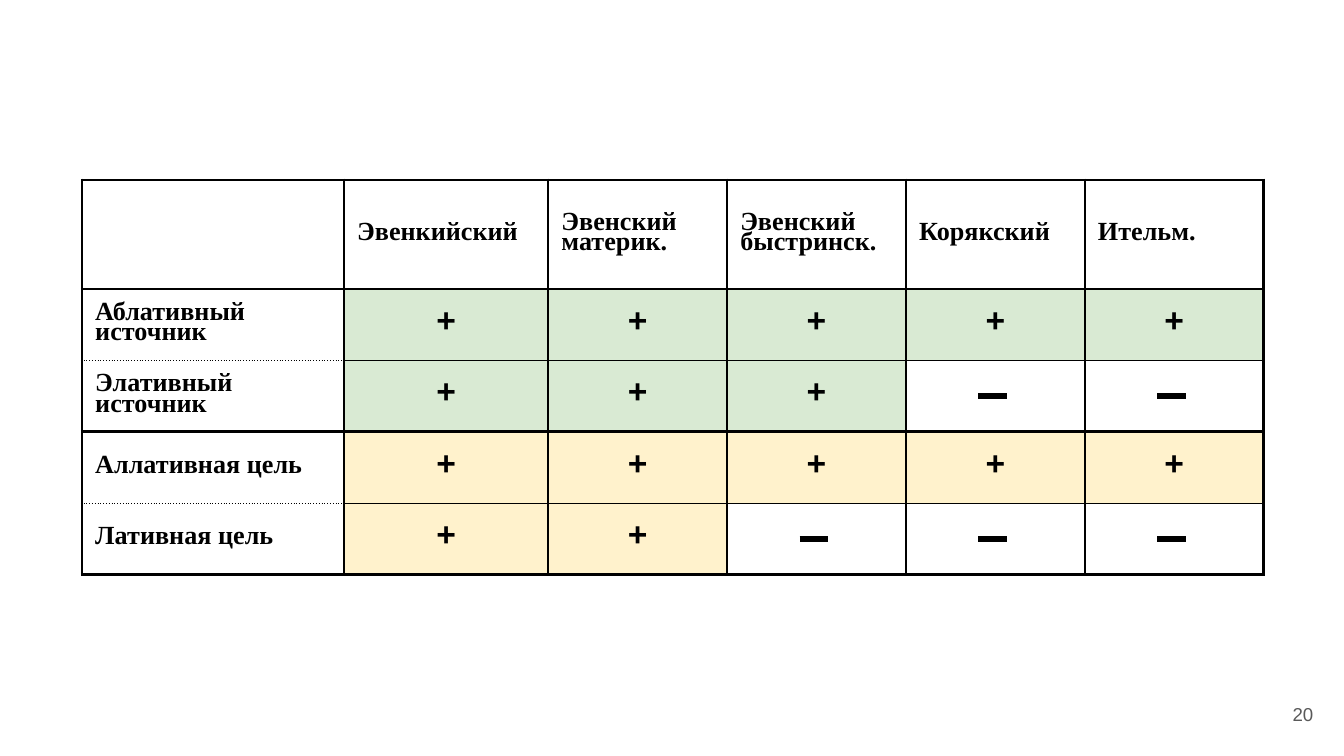
"""Build a slide with a table of spatial cases across five languages."""
from dataclasses import dataclass

from lxml.etree import SubElement
from pptx import Presentation
from pptx.dml.color import RGBColor
from pptx.enum.shapes import MSO_CONNECTOR
from pptx.enum.text import MSO_ANCHOR, PP_ALIGN
from pptx.oxml.ns import qn
from pptx.util import Cm, Pt

BLACK, GREEN, CREAM = "000000", "D9EAD3", "FFF2CC"
LEFT, TOP = 1.55, 3.4
WIDTHS = [4.95, 3.86] + [3.38] * 4
HEIGHTS = [2.06] + [1.35] * 4
DASH_LENGTH, DASH_SHIFT = 0.54, -0.05
MARGINS = dict.fromkeys(
    ("margin_left", "margin_right", "margin_top", "margin_bottom"), Cm(0.25))
LABEL = {"name": "Times New Roman", "size": Pt(14), "bold": True}
PLUS = {"name": "Arial", "size": Pt(18), "bold": True}
NUMBER = {"name": "Arial", "size": Pt(10)}
HEADINGS = ["", "Эвенкийский", "Эвенский материк.", "Эвенский быстринск.",
            "Корякский", "Ительм."]


@dataclass
class CaseRow:
    """A case, its marks by language and the fill of its plus cells."""
    label: str
    marks: str
    fill: str
    opens_group: bool


CASES = [
    CaseRow("Аблативный источник", "+++++", GREEN, True),
    CaseRow("Элативный источник", "+++––", GREEN, False),
    CaseRow("Аллативная цель", "+++++", CREAM, True),
    CaseRow("Лативная цель", "++–––", CREAM, False),
]


def color(value: str) -> RGBColor:
    """Turn a hex string into a colour."""
    return RGBColor.from_string(value)


def assign(target, values: dict) -> None:
    """Set each named attribute on the target."""
    for name, value in values.items():
        setattr(target, name, value)


def write(para, text: str, font: dict, ink: str = BLACK) -> None:
    """Add one formatted span to a paragraph."""
    span = para.add_run()
    span.text = text
    assign(span.font, font)
    span.font.color.rgb = color(ink)


def draw_border(cell, side: str, points: float, dash: str = "solid") -> None:
    """Draw one side of a cell."""
    line = SubElement(cell._tc.get_or_add_tcPr(), qn(f"a:ln{side}"), w=str(Pt(points)))
    fill = SubElement(line, qn("a:solidFill"))
    SubElement(fill, qn("a:srgbClr"), val=BLACK)
    SubElement(line, qn("a:prstDash"), val=dash)


def fill_cell(cell, text: str, font: dict, fill: str = "",
              top: tuple = (1.5,), bottom: tuple = (1.5,)) -> None:
    """Give a cell its margins, borders, fill and text."""
    assign(cell, {**MARGINS, "vertical_anchor": MSO_ANCHOR.MIDDLE})
    for side, style in {"L": (1.5,), "R": (1.5,), "T": top, "B": bottom}.items():
        draw_border(cell, side, *style)
    if fill:
        cell.fill.solid()
        cell.fill.fore_color.rgb = color(fill)
    else:
        cell.fill.background()
    if text:
        para = cell.text_frame.paragraphs[0]
        alignment = PP_ALIGN.CENTER if font is PLUS else PP_ALIGN.LEFT
        assign(para, {"line_spacing": 0.7, "alignment": alignment})
        write(para, text, font)


def draw_dash(page, row: int, column: int) -> None:
    """Draw a minus line in the middle of a cell."""
    middle = LEFT + sum(WIDTHS[:column]) + WIDTHS[column] / 2 + DASH_SHIFT
    height = Cm(TOP + sum(HEIGHTS[:row]) + HEIGHTS[row] / 2)
    line = page.shapes.add_connector(
        MSO_CONNECTOR.STRAIGHT, Cm(middle - DASH_LENGTH / 2), height,
        Cm(middle + DASH_LENGTH / 2), height)
    line.line.width = Pt(3)
    line.line.color.rgb = color(BLACK)
    SubElement(line._element.spPr, qn("a:effectLst"))


def draw_table(page) -> None:
    """Draw the table with its headings, labels and marks."""
    table = page.shapes.add_table(
        len(HEIGHTS), len(WIDTHS), Cm(LEFT), Cm(TOP),
        Cm(sum(WIDTHS)), Cm(sum(HEIGHTS))).table
    assign(table, {"first_row": False, "horz_banding": False})
    for column, width in zip(table.columns, WIDTHS):
        column.width = Cm(width)
    for row, height in zip(table.rows, HEIGHTS):
        row.height = Cm(height)
    for column, heading in enumerate(HEADINGS):
        fill_cell(table.cell(0, column), heading, LABEL)
    for row, case in enumerate(CASES, start=1):
        inner = "bottom" if case.opens_group else "top"
        fill_cell(table.cell(row, 0), case.label, LABEL, **{inner: (0.5, "sysDot")})
        for column, mark in enumerate(case.marks, start=1):
            present = mark == "+"
            fill_cell(table.cell(row, column), mark if present else "", PLUS,
                      case.fill if present else "", **{inner: (0.5,)})
            if not present:
                draw_dash(page, row, column)


def draw_page_number(page, number: str) -> None:
    """Write the page number in the lower right corner."""
    frame = page.shapes.add_textbox(Cm(23.55), Cm(12.95), Cm(1.52), Cm(1.09)).text_frame
    assign(frame, {**MARGINS, "word_wrap": True, "vertical_anchor": MSO_ANCHOR.MIDDLE})
    para = frame.paragraphs[0]
    para.alignment = PP_ALIGN.RIGHT
    write(para, number, NUMBER, "595959")


def main() -> None:
    """Build and save the deck."""
    deck = Presentation()
    assign(deck, {"slide_width": Cm(25.4), "slide_height": Cm(14.29)})
    page = deck.slides.add_slide(deck.slide_layouts[6])
    draw_table(page)
    draw_page_number(page, "20")
    deck.save("out.pptx")


if __name__ == "__main__":
    main()
